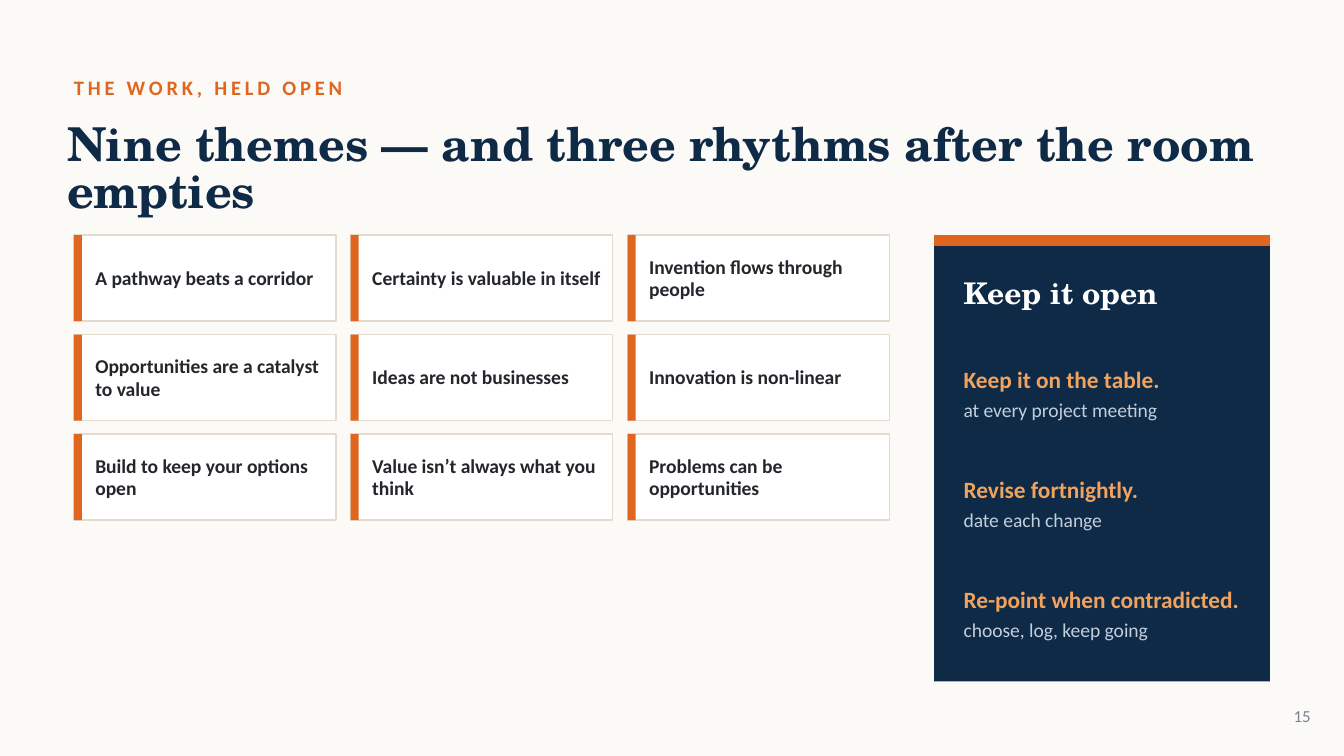
import pptx
import pptx.util
import pptx.dml.color
import pptx.enum.shapes
import pptx.enum.text
from dataclasses import dataclass

Inches = pptx.util.Inches
Pt = pptx.util.Pt
RGB = pptx.dml.color.RGBColor.from_string
ALIGN = pptx.enum.text.PP_ALIGN


@dataclass(frozen=True)
class Theme:
    paper: str = "FBFAF7"
    white: str = "FFFFFF"
    navy: str = "0E2A47"
    orange: str = "E0661F"
    border: str = "E3DBCE"
    ink: str = "23262B"
    amber: str = "F0A35E"
    mist: str = "C3CEDC"
    grey: str = "7A828B"
    serif: str = "TeX Gyre Schola"
    sans: str = "Calibri"
    title: float = 25
    heading: float = 16
    lead: float = 12.5
    eyebrow: float = 11
    body: float = 10.5
    number: float = 9


theme = Theme()
prs = pptx.Presentation()
prs.slide_width = Inches(10)
prs.slide_height = Inches(10 * 9 / 16)
s = prs.slides.add_slide(prs.slide_layouts[6])
s.background.fill.solid()
s.background.fill.fore_color.rgb = RGB(theme.paper)


def add_rect(x, y, w, h, fill, line=None):
    sp = s.shapes.add_shape(pptx.enum.shapes.MSO_SHAPE.RECTANGLE,
                            Inches(x), Inches(y), Inches(w), Inches(h))
    sp.shadow.inherit = False
    sp.fill.solid()
    sp.fill.fore_color.rgb = RGB(fill)
    if line:
        sp.line.color.rgb = RGB(line)
        sp.line.width = Pt(0.75)
    else:
        sp.line.fill.background()


def add_text(x, y, w, h, lines, font=theme.sans, spacing=None, inset=0):
    tf = s.shapes.add_textbox(Inches(x), Inches(y), Inches(w), Inches(h)).text_frame
    tf.word_wrap = True
    tf.vertical_anchor = pptx.enum.text.MSO_ANCHOR.MIDDLE
    tf.margin_left = tf.margin_right = Inches(inset)
    tf.margin_top = tf.margin_bottom = Inches(inset / 2)
    for i, (text, size, color, bold) in enumerate(lines):
        p = tf.add_paragraph() if i else tf.paragraphs[0]
        if spacing:
            p.line_spacing = Pt(spacing)
        r = p.add_run()
        r.text = text
        r.font.name = font
        r.font.size = Pt(size)
        r.font.bold = bold
        r.font.color.rgb = RGB(color)
    return tf


tf = add_text(0.55, 0.5, 6, 0.3,
              [("THE WORK, HELD OPEN", theme.eyebrow, theme.orange, True)])
tf.paragraphs[0].runs[0].font._element.set("spc", "200")
add_text(0.5, 0.82, 9.1, 0.9,
         [("Nine themes — and three rhythms after the room empties",
           theme.title, theme.navy, True)], theme.serif, 25.5)

left, top = 0.55, 1.75
card_w, card_h = 1.95, 0.64
gap_x, gap_y = 0.11, 0.1
themes = [
    "A pathway beats a corridor",
    "Certainty is valuable in itself",
    "Invention flows through people",
    "Opportunities are a catalyst to value",
    "Ideas are not businesses",
    "Innovation is non-linear",
    "Build to keep your options open",
    "Value isn’t always what you think",
    "Problems can be opportunities",
]
for i, text in enumerate(themes):
    row, col = divmod(i, 3)
    x = left + col * (card_w + gap_x)
    y = top + row * (card_h + gap_y)
    add_rect(x, y, card_w, card_h, theme.white, theme.border)
    add_rect(x, y, 0.06, card_h, theme.orange)
    add_text(x + 0.16, y, card_w - 0.21, card_h,
             [(text, theme.body, theme.ink, True)], spacing=12)

panel_x, panel_w = 6.95, 2.5
add_rect(panel_x, top, panel_w, 3.32, theme.navy)
add_rect(panel_x, top, panel_w, 0.08, theme.orange)
add_text(panel_x + 0.22, 1.98, 2.1, 0.4,
         [("Keep it open", theme.heading, theme.white, True)], theme.serif)

rhythms = [
    ("Keep it on the table.", "at every project meeting"),
    ("Revise fortnightly.", "date each change"),
    ("Re-point when contradicted.", "choose, log, keep going"),
]
for i, (lead, detail) in enumerate(rhythms):
    add_text(panel_x + 0.22, 2.55 + i * 0.82, 2.1, 0.75,
             [(lead, theme.lead, theme.amber, True),
              (detail, theme.body, theme.mist, False)], spacing=15)

tf = add_text(9.35, 5.18, 0.5, 0.3,
              [("15", theme.number, theme.grey, False)], inset=0.1)
tf.paragraphs[0].alignment = ALIGN.RIGHT

prs.save("out.pptx")
